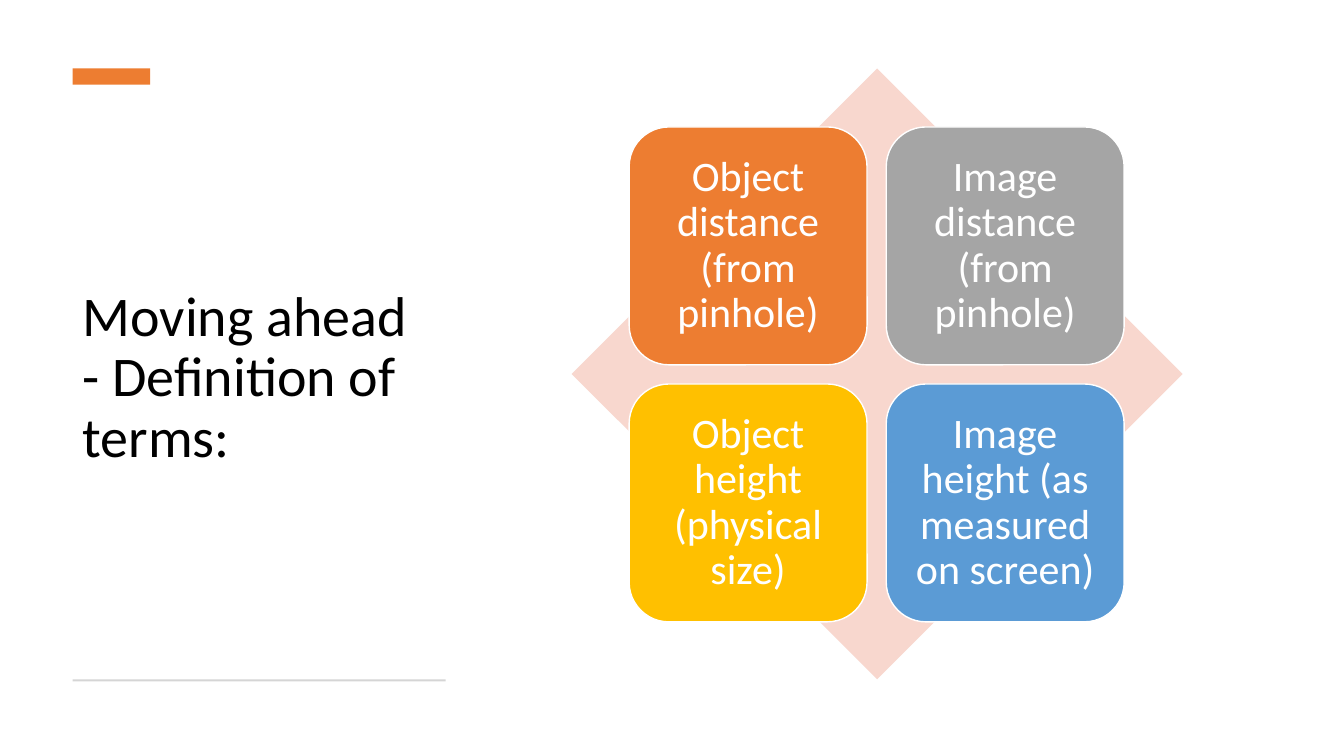
from dataclasses import dataclass

from pptx import Presentation
from pptx.dml.color import RGBColor
from pptx.enum.shapes import MSO_SHAPE
from pptx.enum.text import MSO_ANCHOR, MSO_AUTO_SIZE, PP_ALIGN
from pptx.util import Inches, Pt

RECTANGLE = MSO_SHAPE.RECTANGLE
DIAMOND = MSO_SHAPE.DIAMOND
ROUNDED = MSO_SHAPE.ROUNDED_RECTANGLE
LEFT, CENTER = PP_ALIGN.LEFT, PP_ALIGN.CENTER
MIDDLE = MSO_ANCHOR.MIDDLE
NO_AUTOFIT = MSO_AUTO_SIZE.NONE


@dataclass(frozen=True)
class Theme:
    font: str = "Calibri"
    title_size: int = 40
    term_size: int = 30
    black: str = "000000"
    white: str = "FFFFFF"
    orange: str = "ED7D31"
    gray: str = "A5A5A5"
    gold: str = "FFC000"
    blue: str = "5B9BD5"
    rule: str = "D5D5D5"
    backdrop: str = "F8D7CE"


theme = Theme()


def write_text(shape, text, *, size, color, align, margins=(0.1, 0.05)):
    frame = shape.text_frame
    frame.word_wrap = True
    frame.auto_size = NO_AUTOFIT
    frame.vertical_anchor = MIDDLE
    frame.margin_left = frame.margin_right = Inches(margins[0])
    frame.margin_top = frame.margin_bottom = Inches(margins[1])
    paragraph = frame.paragraphs[0]
    paragraph.alignment = align
    paragraph.line_spacing = 0.9
    run = paragraph.add_run()
    run.text = text
    run.font.name = theme.font
    run.font.size = Pt(size)
    run.font.color.rgb = RGBColor.from_string(color)


def add_block(kind, left, top, width, height, fill, line=None):
    block = slide.shapes.add_shape(
        kind, Inches(left), Inches(top), Inches(width), Inches(height))
    block.shadow.inherit = False
    block.fill.solid()
    block.fill.fore_color.rgb = RGBColor.from_string(fill)
    if line:
        block.line.color.rgb = RGBColor.from_string(line)
        block.line.width = Pt(1)
    else:
        block.line.fill.background()
    return block


prs = Presentation()
prs.slide_width, prs.slide_height = Inches(13.33), Inches(7.5)
slide = prs.slides.add_slide(prs.slide_layouts[5])

# Title column between the accent bar and the rule
column_left, column_width = 0.72, 3.7
title = slide.shapes.title
title.left, title.top = Inches(column_left), Inches(1.05)
title.width, title.height = Inches(column_width), Inches(5.41)
write_text(title, "Moving ahead - Definition of terms:",
           size=theme.title_size, color=theme.black, align=LEFT)
add_block(RECTANGLE, column_left, 0.68, 0.77, 0.16, theme.orange)
add_block(RECTANGLE, column_left, 6.74, column_width, 0.02, theme.rule)

# Diamond behind the terms
add_block(DIAMOND, 5.67, 0.68, 6.06, 6.06, theme.backdrop)

# Two-by-two grid of terms
terms = [
    ("Object distance (from pinhole)", theme.orange),
    ("Image distance (from pinhole)", theme.gray),
    ("Object height (physical size)", theme.gold),
    ("Image height (as measured on screen)", theme.blue),
]
grid_left, grid_top, tile_size, tile_step = 6.24, 1.26, 2.36, 2.55
for index, (term, color) in enumerate(terms):
    row, column = divmod(index, 2)
    tile = add_block(ROUNDED, grid_left + column * tile_step,
                     grid_top + row * tile_step, tile_size, tile_size,
                     color, line=theme.white)
    write_text(tile, term, size=theme.term_size, color=theme.white,
               align=CENTER, margins=(0.12, 0.12))

prs.save("out.pptx")
